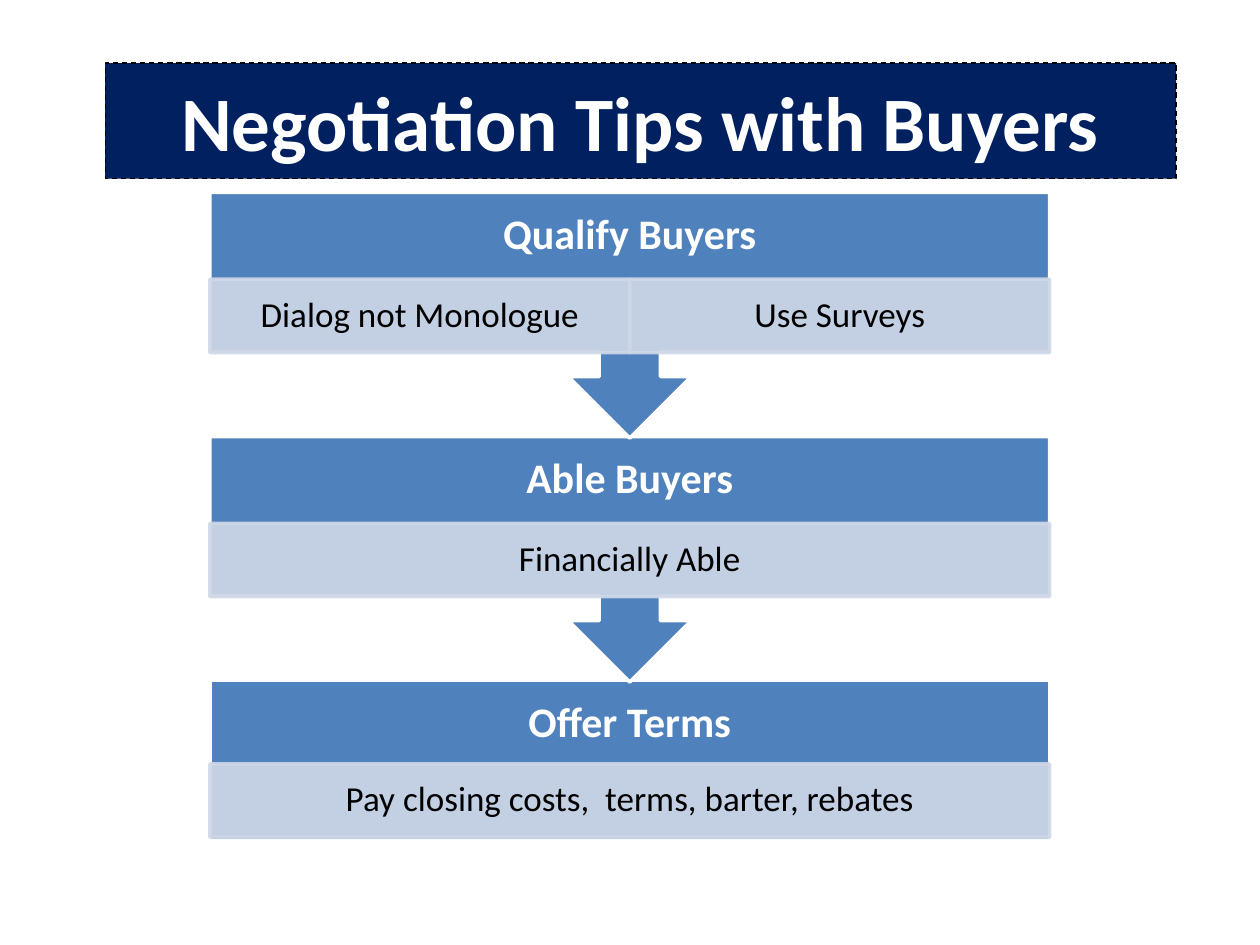
"""Build the slide of negotiation tips with a three-step buyer flow."""
from dataclasses import dataclass

from lxml import etree
from pptx import Presentation
from pptx.dml.color import RGBColor
from pptx.enum.dml import MSO_LINE
from pptx.enum.shapes import MSO_SHAPE
from pptx.enum.text import MSO_ANCHOR, MSO_AUTO_SIZE, PP_ALIGN
from pptx.oxml.ns import qn
from pptx.util import Cm, Pt

RECT = MSO_SHAPE.RECTANGLE
CALLOUT = MSO_SHAPE.UP_ARROW_CALLOUT
DASH = MSO_LINE.DASH
MIDDLE = MSO_ANCHOR.MIDDLE
NO_FIT = MSO_AUTO_SIZE.NONE
CENTER = PP_ALIGN.CENTER


@dataclass(frozen=True)
class Theme:
    font: str = "Calibri"
    navy: RGBColor = RGBColor(0x00, 0x20, 0x60)
    blue: RGBColor = RGBColor(0x4F, 0x81, 0xBD)
    pale: RGBColor = RGBColor(0xD0, 0xD8, 0xE8)
    white: RGBColor = RGBColor(0xFF, 0xFF, 0xFF)
    black: RGBColor = RGBColor(0x00, 0x00, 0x00)
    title: int = 44
    heading: int = 24
    detail: int = 20
    border: float = 2
    title_border: float = 0.75
    opacity: int = 90


THEME = Theme()
LEFT, WIDTH = 4.23, 16.93
TOP, PITCH = 3.88, 4.92
CALLOUT_H, LAST_H = 4.95, 3.23
HEADING_H, DETAIL_H = 1.75, 1.48
STEPS = [
    ("Qualify Buyers", ["Dialog not Monologue", "Use Surveys"]),
    ("Able Buyers", ["Financially Able"]),
    ("Offer Terms", ["Pay closing costs,  terms, barter, rebates"]),
]


def paint(sp, fill, line, width):
    sp.fill.solid()
    sp.fill.fore_color.rgb = fill
    sp.line.color.rgb = line
    sp.line.width = Pt(width)


def write(sp, text, size, color, bold=False, spacing=0.9, inset=(0.4, 0.08)):
    tf = sp.text_frame
    tf.text = text
    tf.word_wrap = True
    tf.auto_size = NO_FIT
    tf.vertical_anchor = MIDDLE
    tf.margin_left = tf.margin_right = Cm(inset[0])
    tf.margin_top = tf.margin_bottom = Cm(inset[1])
    p = tf.paragraphs[0]
    p.alignment = CENTER
    p.line_spacing = spacing
    font = p.runs[0].font
    font.name = THEME.font
    font.size = Pt(size)
    font.bold = bold
    font.color.rgb = color


def add_title(s, text):
    sp = s.shapes.title
    sp.left, sp.top, sp.width, sp.height = Cm(2.12), Cm(1.27), Cm(21.59), Cm(2.33)
    paint(sp, THEME.navy, THEME.black, THEME.title_border)
    sp.line.dash_style = DASH
    write(sp, text, THEME.title, THEME.white, True, 1.0, (0.25, 0.13))


def add_box(s, kind, left, top, width, height, fill, line):
    sp = s.shapes.add_shape(kind, Cm(left), Cm(top), Cm(width), Cm(height))
    sp.shadow.inherit = False
    paint(sp, fill, line, THEME.border)
    return sp


def add_detail(s, text, left, top, width):
    sp = add_box(s, RECT, left, top, width, DETAIL_H, THEME.pale, THEME.pale)
    for color in sp._element.spPr.iter(qn("a:srgbClr")):
        etree.SubElement(color, qn("a:alpha"), val=str(THEME.opacity * 1000))
    write(sp, text, THEME.detail, THEME.black)


def add_step(s, top, heading, details, last):
    kind, height = (RECT, LAST_H) if last else (CALLOUT, CALLOUT_H)
    heading_h = LAST_H * 0.52 if last else HEADING_H
    sp = add_box(s, kind, LEFT, top, WIDTH, height, THEME.blue, THEME.white)
    sp.rotation = 0 if last else 180
    tb = s.shapes.add_textbox(Cm(LEFT), Cm(top), Cm(WIDTH), Cm(HEADING_H))
    write(tb, heading, THEME.heading, THEME.white, True, inset=(0.48, 0.48))
    width = WIDTH / len(details)
    for i, text in enumerate(details):
        add_detail(s, text, LEFT + i * width, top + heading_h, width)


def main():
    prs = Presentation()
    prs.slide_width, prs.slide_height = Cm(25.4), Cm(19.05)
    s = prs.slides.add_slide(prs.slide_layouts[0])
    subtitle = s.placeholders[1]._element
    subtitle.getparent().remove(subtitle)
    add_title(s, "Negotiation Tips with Buyers")
    for i, (heading, details) in reversed(list(enumerate(STEPS))):
        add_step(s, TOP + i * PITCH, heading, details, i == len(STEPS) - 1)
    prs.save("out.pptx")


if __name__ == "__main__":
    main()
